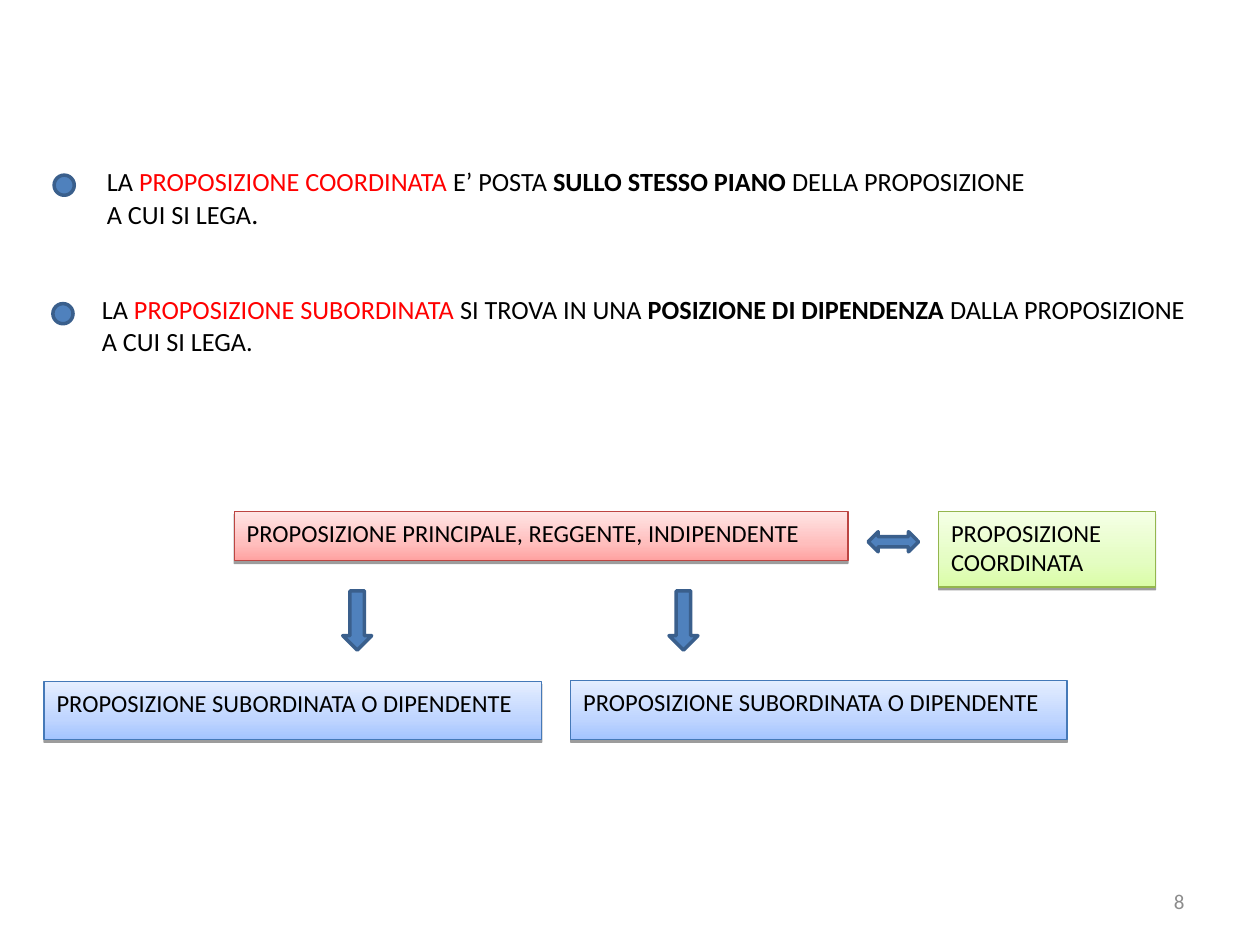
from copy import deepcopy

from lxml.etree import SubElement
from pptx import Presentation
from pptx.dml.color import RGBColor
from pptx.enum.shapes import MSO_SHAPE as SHAPE
from pptx.enum.text import MSO_ANCHOR as ANCHOR, PP_ALIGN as ALIGN
from pptx.oxml.ns import qn
from pptx.util import Inches, Pt

BLACK, RED, GRAY = "000000", "FF0000", "8C8C8C"
BLUE, DARK_BLUE = "4F81BD", "3A5F8C"

# Definitions: box, anchor, wrap, paragraphs of (text, colour, bold, size)
DEFINITIONS = [
    ((0.75, 1.26, 7.59, 0.62), ANCHOR.MIDDLE, False, [
        [("LA ", BLACK, False, 15), ("PROPOSIZIONE COORDINATA ", RED, False, 15),
         ("E’ POSTA ", BLACK, False, 15), ("SULLO STESSO PIANO", BLACK, True, 15),
         (" DELLA PROPOSIZIONE", BLACK, False, 15)],
        [("A CUI SI LEGA", BLACK, False, 15), (".", BLACK, False, 16)]]),
    ((0.71, 2.28, 9.72, 0.61), ANCHOR.TOP, True, [
        [("LA ", BLACK, False, 15), ("PROPOSIZIONE SUBORDINATA ", RED, False, 15),
         ("SI TROVA IN UNA ", BLACK, False, 15), ("POSIZIONE DI DIPENDENZA", BLACK, True, 15),
         (" DALLA PROPOSIZIONE", BLACK, False, 15)],
        [("A CUI SI LEGA.", BLACK, False, 15)]]),
]
PAGE_NUMBER = ((7.17, 6.95, 2.33, 0.4), ANCHOR.MIDDLE, True, [[("8", GRAY, False, 12)]])

# Diagram boxes: gradient from bottom to top, and outline
STYLES = {
    "main": (("FFA2A1", "FFBEBD", "FFE5E5"), "BC4542"),
    "subordinate": (("A3C4FF", "BFD5FF", "E5EEFF"), "4579B8"),
    "coordinate": (("DAFDA7", "E4FDC2", "F5FFE6"), "94B64E"),
}
STOPS = (0, 0.35, 1)
SUBORDINATE = "PROPOSIZIONE SUBORDINATA O DIPENDENTE"
CLAUSES = [
    ("main", (1.86, 4.06, 4.87, 0.39), "PROPOSIZIONE PRINCIPALE, REGGENTE, INDIPENDENTE"),
    ("subordinate", (0.35, 5.41, 3.95, 0.46), SUBORDINATE),
    ("subordinate", (4.53, 5.4, 3.94, 0.47), SUBORDINATE),
    ("coordinate", (7.45, 4.06, 1.72, 0.6), "PROPOSIZIONE COORDINATA"),
]

# Bullet dots and arrows
MARKS = [
    (SHAPE.FLOWCHART_CONNECTOR, (0.42, 2.41, 0.16, 0.16)),
    (SHAPE.FLOWCHART_CONNECTOR, (0.43, 1.39, 0.16, 0.16)),
    (SHAPE.DOWN_ARROW, (2.72, 4.69, 0.23, 0.47)),
    (SHAPE.DOWN_ARROW, (5.31, 4.69, 0.23, 0.47)),
    (SHAPE.LEFT_RIGHT_ARROW, (6.89, 4.22, 0.4, 0.16)),
]


def rgb(value):
    return RGBColor.from_string(value)


def set_font(font, size, color):
    font.name, font.size = "Calibri", Pt(size)
    font.color.rgb = rgb(color)


def add_text(s, box, anchor, wrap, paragraphs, align=ALIGN.LEFT):
    tf = s.shapes.add_textbox(*map(Inches, box)).text_frame
    tf.word_wrap, tf.vertical_anchor = wrap, anchor
    for i, runs in enumerate(paragraphs):
        p = tf.add_paragraph() if i else tf.paragraphs[0]
        p.alignment = align
        for text, color, bold, size in runs:
            r = p.add_run()
            r.text, r.font.bold = text, bold
            set_font(r.font, size, color)


def add_shape(s, kind, box, line, width):
    sp = s.shapes.add_shape(kind, *map(Inches, box))
    sp.shadow.inherit = False
    sp.line.color.rgb, sp.line.width = rgb(line), Pt(width)
    return sp


def add_mark(s, kind, box):
    sp = add_shape(s, kind, box, DARK_BLUE, 2)
    sp.fill.solid()
    sp.fill.fore_color.rgb = rgb(BLUE)


def add_clause(s, style, box, text):
    colors, line = STYLES[style]
    sp = add_shape(s, SHAPE.RECTANGLE, box, line, 0.75)

    # Three-stop gradient
    sp.fill.gradient()
    sp.fill.gradient_angle = 90
    stops = sp.element.spPr.find(".//" + qn("a:gsLst"))
    stops.append(deepcopy(stops[0]))
    for stop, position, color in zip(sp.fill.gradient_stops, STOPS, colors):
        stop.position, stop.color.rgb = position, rgb(color)

    # Soft shadow below
    effects = sp.element.spPr.find(qn("a:effectLst"))
    shadow = SubElement(effects, qn("a:outerShdw"), blurRad="0", dist=str(Pt(1.6)),
                        dir="5400000", rotWithShape="0")
    shade = SubElement(shadow, qn("a:srgbClr"), val=BLACK)
    SubElement(shade, qn("a:alpha"), val="38000")

    tf = sp.text_frame
    tf.word_wrap, tf.vertical_anchor = True, ANCHOR.TOP
    p = tf.paragraphs[0]
    p.text, p.alignment, p.space_after = text, ALIGN.LEFT, Pt(10)
    set_font(p.font, 14, BLACK)


def main():
    prs = Presentation()
    prs.slide_width, prs.slide_height = Inches(10), Inches(7.5)
    s = prs.slides.add_slide(prs.slide_layouts[6])
    for definition in DEFINITIONS:
        add_text(s, *definition)
    for clause in CLAUSES:
        add_clause(s, *clause)
    for mark in MARKS:
        add_mark(s, *mark)
    add_text(s, *PAGE_NUMBER, align=ALIGN.RIGHT)
    prs.save("out.pptx")


if __name__ == "__main__":
    main()
